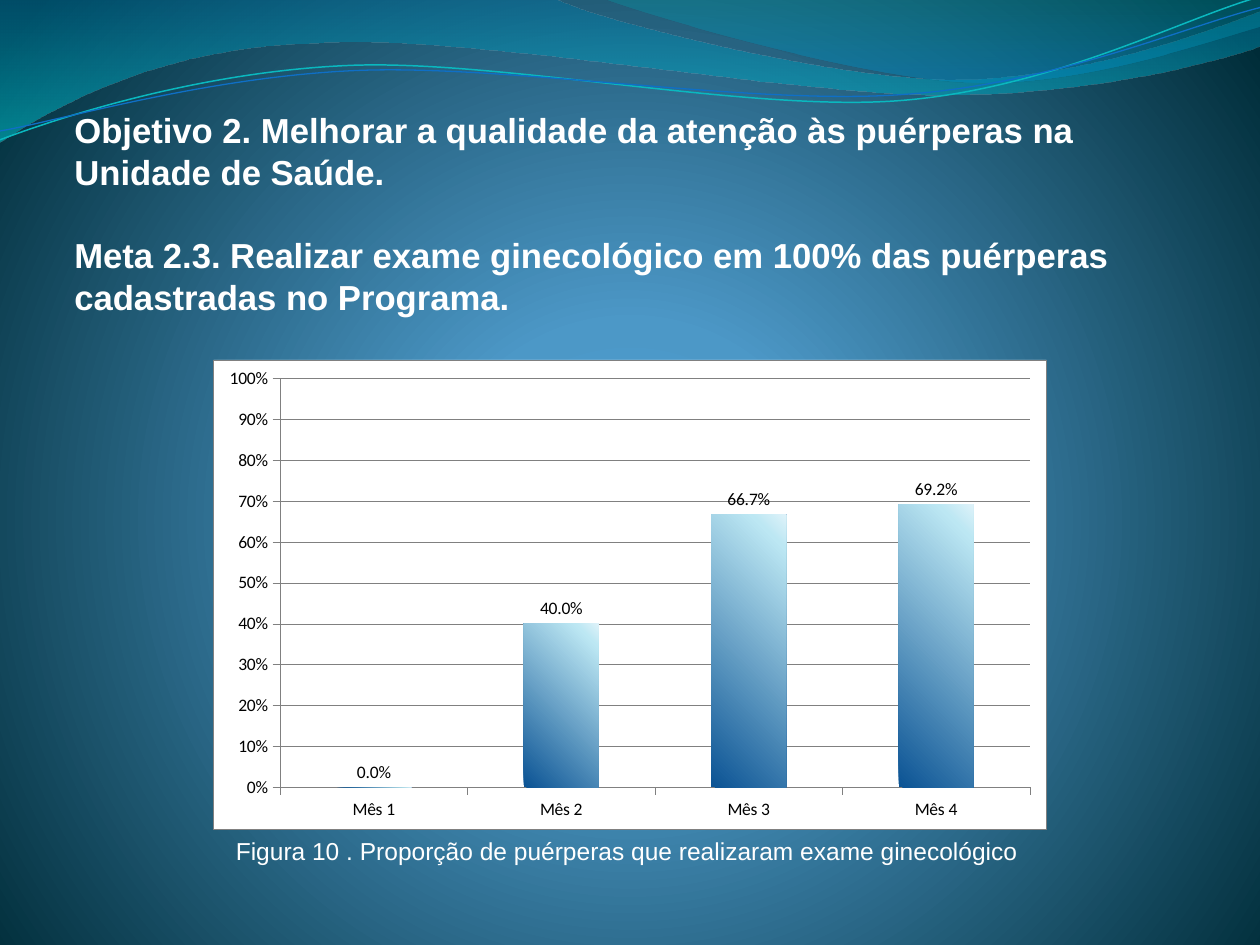
from lxml import etree
from pptx import Presentation
from pptx import util as u
from pptx.chart import data as cd
from pptx.dml.color import RGBColor
from pptx.enum import chart as ch, text as tx
from pptx.oxml import parse_xml
from pptx.oxml.ns import nsdecls, qn

HUE = {"white": "FFFFFF", "black": "000000", "grey": "808080",
       "teal": "0AB8BF", "blue": "0F6FC6"}
RGB = {k: RGBColor.from_string(v) for k, v in HUE.items()}


def grad(root, stops, shade):
    """Swap the first solid fill under root for a gradient of (pos, hex[, alpha])."""
    old = next(root.iter(qn("a:solidFill")))
    gs = ""
    for pos, hue, *fade in stops:
        clear = "".join(f'<a:alpha val="{n * 1000}"/>' for n in fade)
        gs += f'<a:gs pos="{pos * 1000}"><a:srgbClr val="{hue}">{clear}</a:srgbClr></a:gs>'
    old.getparent().replace(old, parse_xml(
        f'<a:gradFill {nsdecls("a")} rotWithShape="1"><a:gsLst>{gs}</a:gsLst>{shade}</a:gradFill>'))


def trace(start, legs, close):
    """Draw an outline in inches; a leg of six numbers is a Bezier curve."""
    pts = [leg[i:i + 2] for leg in legs for i in range(0, len(leg), 2)]
    pen = slide.shapes.build_freeform(*[u.Cm(2.54 * n) for n in start])
    pen.add_line_segments([(u.Cm(2.54 * x), u.Cm(2.54 * y)) for x, y in pts], close=close)
    shape = pen.convert_to_shape()
    shape.shadow.inherit = False
    steps = iter(list(shape.element.iter(qn("a:lnTo"))))
    for leg in legs:
        group = [next(steps) for _ in range(len(leg) // 2)]
        if len(group) == 3:
            bend = etree.Element(qn("a:cubicBezTo"))
            group[0].addprevious(bend)
            for step in group:
                bend.append(step[0])
                step.getparent().remove(step)
    return shape


prs = Presentation()
prs.slide_width, prs.slide_height = u.Cm(25.4), u.Cm(19.05)
slide = prs.slides.add_slide(prs.slide_layouts[6])

# Background
slide.background.fill.solid()
slide.background.fill.fore_color.rgb = RGB["blue"]
grad(slide.element, [(0, "4AA0D6"), (25, "4C98C7"), (100, "002C38")],
     '<a:path path="circle"><a:fillToRect l="10000" t="110000" r="10000" b="100000"/></a:path>')

# Translucent waves
waves = [
    ((0, 0), [(4.4, -0.01), (4.76, 0.17, 6.64, 0.63, 7.58, 0.63),
              (8.53, 0.63, 9.58, 0.26, 10, 0.09), (10.01, 0.36),
              (9.83, 0.44, 8.7, 0.76, 7.46, 0.75), (6.22, 0.75, 3.82, 0.28, 2.57, 0.34),
              (1.29, 0.36, 0.46, 0.83, -0.01, 1.13), (0, 0)],
     [(0, "0074A1", 45), (100, "00C6CF", 55)]),
    ((4.79, -0.01), [(5.09, 0.11, 6.82, 0.62, 7.69, 0.65),
                     (8.56, 0.69, 9.61, 0.32, 10, 0.21), (10, 0), (4.79, -0.01)],
     [(0, "00A1A9", 30), (80, "008BBF", 45)]),
]
for start, legs, stops in waves:
    wave = trace(start, legs, True)
    wave.line.fill.background()
    wave.fill.solid()
    wave.fill.fore_color.rgb = RGB["blue"]
    grad(wave.element, stops, '<a:lin ang="5400000" scaled="1"/>')

# Thin curves
curves = [
    ((0, 1.11), [(0.48, 0.93, 1.58, 0.57, 2.77, 0.52), (3.95, 0.47, 5.93, 0.89, 7.13, 0.8),
                 (8.33, 0.71, 9.38, 0.15, 9.98, -0.02)], "teal", 0.85),
    ((0, 1.04), [(0.47, 0.96, 1.64, 0.61, 2.83, 0.56), (4.03, 0.51, 5.97, 0.84, 7.17, 0.75),
                 (8.36, 0.67, 9.41, 0.21, 10, 0.06)], "blue", 0.75),
]
for start, legs, hue, wide in curves:
    curve = trace(start, legs, False)
    curve.fill.background()
    curve.line.color.rgb = RGB[hue]
    curve.line.width = u.Pt(wide)

# Heading and caption
notes = [
    ((1.5, 2.08, 21.82, 6.6), 0.12, 0.05, 19.8, True, tx.PP_ALIGN.LEFT,
     ["Objetivo 2. Melhorar a qualidade da atenção às puérperas na Unidade de Saúde.",
      "Meta 2.3. Realizar exame ginecológico em 100% das puérperas cadastradas no Programa."]),
    ((-1.09, 16.71, 21.82, 1.6), 0.14, 0.2, 14, False, tx.PP_ALIGN.RIGHT,
     ["Figura 10 . Proporção de puérperas que realizaram exame ginecológico"]),
]
for box, top, right, size, bold, side, lines in notes:
    frame = slide.shapes.add_textbox(*map(u.Cm, box)).text_frame
    frame.word_wrap = True
    frame.margin_left = frame.margin_bottom = 0
    frame.margin_top, frame.margin_right = u.Cm(top), u.Cm(right)
    for i, line in enumerate(lines):
        para = frame.add_paragraph() if i else frame.paragraphs[0]
        para.alignment = side
        para.space_before = u.Pt(23.7 if i else 0)
        run = para.add_run()
        run.text = line
        run.font.name, run.font.size, run.font.bold = "Arial", u.Pt(size), bold
        run.font.color.rgb = RGB["white"]

# Column chart
data = cd.CategoryChartData()
data.categories = [f"Mês {n}" for n in range(1, 5)]
data.add_series("Series 1", [0, 0.4, 0.667, 0.692])
chart = slide.shapes.add_chart(ch.XL_CHART_TYPE.COLUMN_CLUSTERED, u.Cm(4.3), u.Cm(7.25),
                               u.Cm(16.8), u.Cm(9.48), data).chart
chart.has_legend = chart.has_title = False
chart.font.name, chart.font.size = "Calibri", u.Pt(10)
chart.font.color.rgb = RGB["black"]

plot = chart.plots[0]
plot.gap_width = 150
plot.vary_by_categories = False
bars = plot.series[0]
tags = bars.data_labels
tags.show_value = True
tags.number_format, tags.number_format_is_linked = "0.0%", False
tags.position = ch.XL_LABEL_POSITION.OUTSIDE_END
bars.format.fill.solid()
bars.format.fill.fore_color.rgb = RGB["blue"]
grad(chart.element, [(0, "0B5394"), (90, "BCE7F3"), (100, "DEF2F9")],
     '<a:lin ang="18900000" scaled="0"/>')

# Axes and grid
val, cat = chart.value_axis, chart.category_axis
val.minimum_scale, val.maximum_scale, val.major_unit = 0, 1, 0.1
val.has_major_gridlines = True
val.tick_labels.number_format, val.tick_labels.number_format_is_linked = "0%", False
for axis in (val, cat):
    axis.major_tick_mark = ch.XL_TICK_MARK.OUTSIDE
    axis.tick_labels.font.name, axis.tick_labels.font.size = "Calibri", u.Pt(10)
    axis.tick_labels.font.color.rgb = RGB["black"]
for part in (val, cat, val.major_gridlines):
    part.format.line.color.rgb = RGB["grey"]
    part.format.line.width = u.Pt(0.25)

# White chart and plot areas, thin chart border
area = (f'<c:spPr {nsdecls("c", "a")}><a:solidFill><a:srgbClr val="{HUE["white"]}"/>'
        '</a:solidFill><a:ln w="3175">%s</a:ln></c:spPr>')
edge = f'<a:solidFill><a:srgbClr val="{HUE["grey"]}"/></a:solidFill>'
body = chart.element.find(qn("c:chart"))
room = body.find(qn("c:plotArea"))
body.addnext(parse_xml(area % edge))
room.append(parse_xml(area % "<a:noFill/>"))

# Plot position as shares of the chart
for old in room.findall(qn("c:layout")):
    room.remove(old)
lay = etree.Element(qn("c:layout"))
hand = etree.SubElement(lay, qn("c:manualLayout"))
for tag, v in [("layoutTarget", "inner"), ("xMode", "edge"), ("yMode", "edge"),
               ("x", "0.08"), ("y", "0.04"), ("w", "0.9"), ("h", "0.87")]:
    etree.SubElement(hand, qn("c:" + tag)).set("val", v)
room.insert(0, lay)

prs.save("out.pptx")
